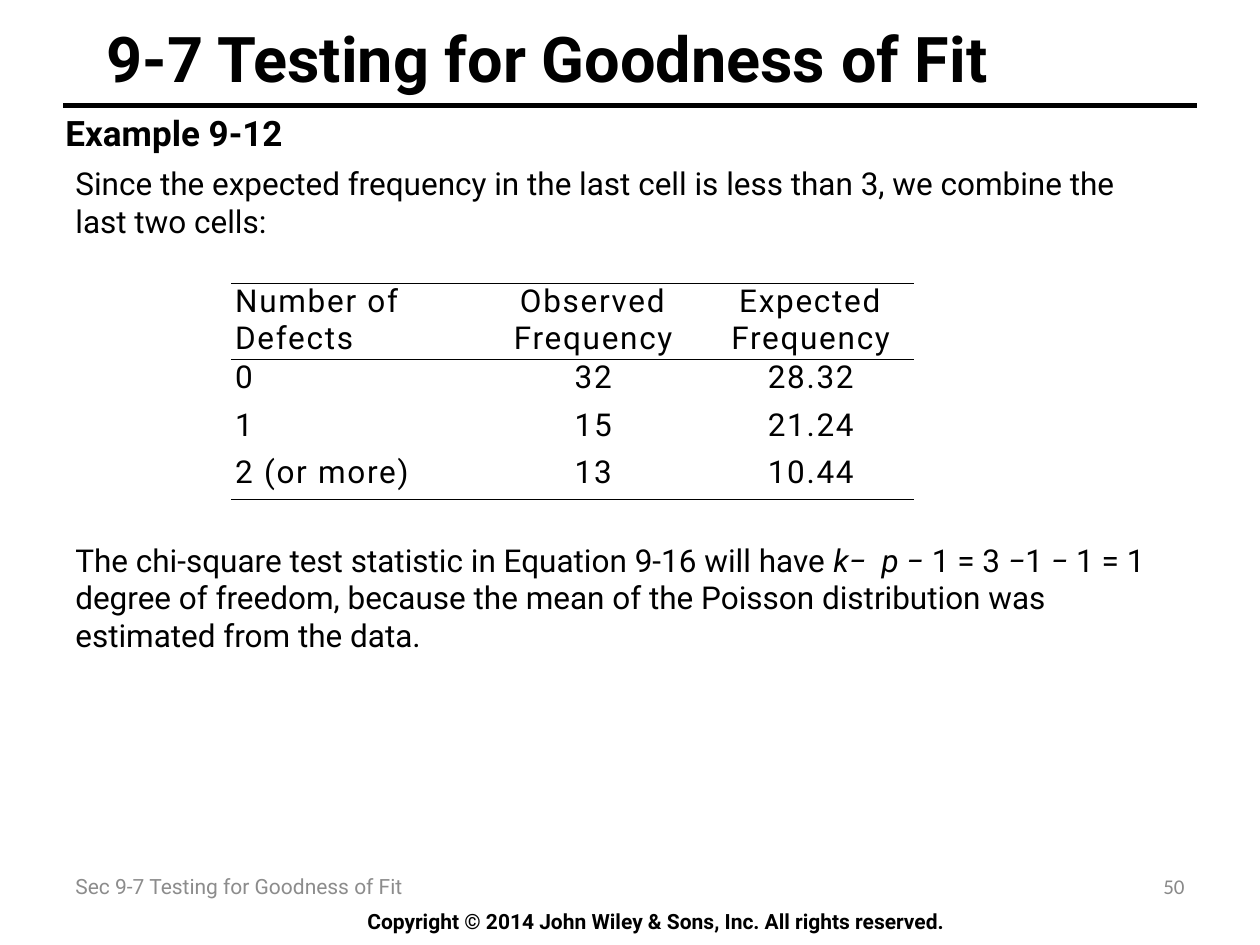
from lxml import etree
from pptx import Presentation
from pptx import util as u
from pptx.dml.color import RGBColor
from pptx.enum import shapes, text
from pptx.oxml.ns import qn

FONT = "Roboto"
BLACK = "000000"
MIDDLE = text.MSO_ANCHOR.MIDDLE
TOP = text.MSO_ANCHOR.TOP
LEFT, CENTER, RIGHT = text.PP_ALIGN.LEFT, text.PP_ALIGN.CENTER, text.PP_ALIGN.RIGHT

COLUMN_WIDTHS = [5.0, 4.6, 4.17]
ROW_HEIGHTS = [1.52, 0.97, 0.76, 1.09]
DEFECT_ROWS = [
    ["Number of Defects", "Observed Frequency", "Expected Frequency"],
    ["0", "32", "28.32"],
    ["1", "15", "21.24"],
    ["2 (or more)", "13", "10.44"],
]


def color(hex_value):
    return RGBColor.from_string(hex_value)


def set_values(target, values):
    for name, value in values.items():
        setattr(target, name, value)


def add_run(paragraph, words, size, hex_color=BLACK, **font_values):
    run = paragraph.add_run()
    run.text = words
    set_values(run.font, {"name": FONT, "size": u.Pt(size), **font_values})
    run.font.color.rgb = color(hex_color)
    return run


def add_text_box(slide, box, paragraphs, size, anchor=TOP, align=LEFT,
                 gap=0, hex_color=BLACK, **font_values):
    """Each paragraph is a list of (words, italic) pairs."""
    frame = slide.shapes.add_textbox(*map(u.Cm, box)).text_frame
    set_values(frame, {"word_wrap": True, "vertical_anchor": anchor})
    for index, parts in enumerate(paragraphs):
        paragraph = frame.add_paragraph() if index else frame.paragraphs[0]
        paragraph.alignment = align
        if index:
            paragraph.space_before = u.Pt(gap)
        for words, italic in parts:
            add_run(paragraph, words, size, hex_color, italic=italic, **font_values)


def add_title(slide, words):
    title = slide.shapes.title
    set_values(title, {"left": u.Cm(1.9), "top": u.Cm(0),
                       "width": u.Cm(21.39), "height": u.Cm(2.33)})
    frame = title.text_frame
    set_values(frame, {"vertical_anchor": MIDDLE, "word_wrap": True,
                       "auto_size": text.MSO_AUTO_SIZE.NONE})
    frame.paragraphs[0].alignment = LEFT
    add_run(frame.paragraphs[0], words, 36, bold=True)


def add_rule(slide, left, right, y, weight):
    line = slide.shapes.add_connector(
        shapes.MSO_CONNECTOR.STRAIGHT, u.Cm(left), u.Cm(y), u.Cm(right), u.Cm(y))
    line.line.color.rgb = color(BLACK)
    line.line.width = u.Pt(weight)
    etree.SubElement(line._element.spPr, qn("a:effectLst"))


def set_borders(cell, ruled_sides):
    properties = cell._tc.get_or_add_tcPr()
    for index, side in enumerate(["lnL", "lnR", "lnT", "lnB"]):
        border = etree.Element(qn(f"a:{side}"), w=str(u.Pt(1)))
        if side in ruled_sides:
            fill = etree.SubElement(border, qn("a:solidFill"))
            etree.SubElement(fill, qn("a:srgbClr"), val=BLACK)
        else:
            etree.SubElement(border, qn("a:noFill"))
        properties.insert(index, border)


def add_defect_table(slide, left, top):
    last = len(DEFECT_ROWS) - 1
    table = slide.shapes.add_table(
        len(ROW_HEIGHTS), len(COLUMN_WIDTHS), u.Cm(left), u.Cm(top),
        u.Cm(sum(COLUMN_WIDTHS)), u.Cm(sum(ROW_HEIGHTS))).table
    set_values(table, {"first_row": False, "horz_banding": False})
    for column, width in zip(table.columns, COLUMN_WIDTHS):
        column.width = u.Cm(width)
    for r, (row, height) in enumerate(zip(table.rows, ROW_HEIGHTS)):
        row.height = u.Cm(height)
        # Rules above and below the header and below the last row
        ruled_sides = [side for side, ruled in
                       [("lnT", r in (0, 1)), ("lnB", r in (0, last))] if ruled]
        for c, cell in enumerate(row.cells):
            set_values(cell, {
                "margin_left": u.Cm(0.08), "margin_right": u.Cm(0.08),
                "margin_top": 0, "margin_bottom": 0,
                "vertical_anchor": MIDDLE if r == last else TOP})
            cell.fill.background()
            set_borders(cell, ruled_sides)
            paragraph = cell.text_frame.paragraphs[0]
            paragraph.alignment = CENTER if c else LEFT
            run = add_run(paragraph, DEFECT_ROWS[r][c], 18)
            run.font._element.set("spc", "100")


def main():
    presentation = Presentation()
    set_values(presentation, {"slide_width": u.Cm(25.4), "slide_height": u.Cm(19.05)})
    slide = presentation.slides.add_slide(presentation.slide_layouts[5])

    # Heading
    add_rule(slide, 1.27, 24.13, 2.12, 3)
    add_title(slide, "9-7 Testing for Goodness of Fit")
    add_text_box(slide, (1.07, 2.12, 21.59, 1.11), [[("Example 9-12", False)]],
                 20, bold=True)

    # Explanation, with room for the table between its paragraphs
    add_text_box(slide, (1.27, 3.18, 22.43, 11.02), [
        [("Since the expected frequency in the last cell is less than 3, "
          "we combine the last two cells:", False)],
        [("The chi-square test statistic in Equation 9-16 will have ", False),
         ("k−  p − ", True), ("1 = 3 ", False), ("−", True), ("1 ", False),
         ("−", True),
         (" 1 = 1 degree of freedom, because the mean of the Poisson "
          "distribution was estimated from the data.", False)],
    ], 18, gap=172)
    add_defect_table(slide, 4.66, 5.72)

    # Footer
    add_text_box(slide, (1.27, 17.36, 13.76, 1.01),
                 [[("Sec 9-7 Testing for Goodness of Fit", False)]],
                 12, MIDDLE, hex_color="8C8C8C")
    add_text_box(slide, (21.17, 17.36, 2.96, 1.01), [[("50", False)]],
                 12, MIDDLE, RIGHT, hex_color="898989", name="Calibri")
    add_text_box(slide, (4.23, 18.2, 17.99, 0.77),
                 [[("Copyright © 2014 John Wiley & Sons, Inc. "
                    "All rights reserved.", False)]],
                 12, align=CENTER, bold=True)

    presentation.save("out.pptx")


if __name__ == "__main__":
    main()
